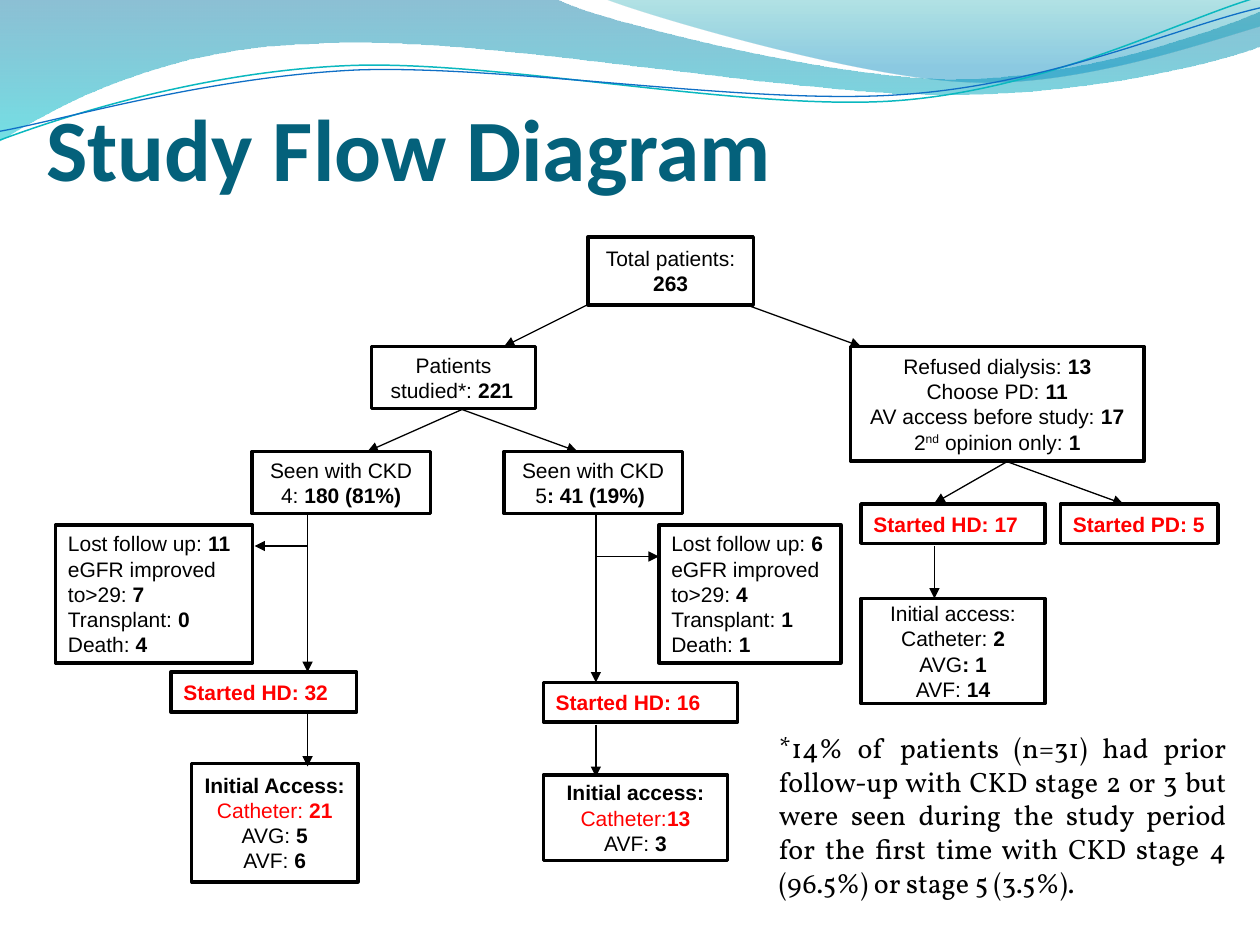
"""Build the study flow diagram slide."""
from itertools import groupby
from math import cos, radians, sin

from lxml.etree import SubElement
from pptx import Presentation
from pptx.dml.color import RGBColor
from pptx.enum.shapes import MSO_CONNECTOR, MSO_SHAPE
from pptx.enum.text import MSO_ANCHOR, PP_ALIGN
from pptx.oxml.ns import qn
from pptx.util import Pt

THEME = {
    "title": ("Calibri", 50, "04617B"),
    "box": ("Arial", 12, "000000"),
    "note": ("Vollkorn", 16, "000000"),
    "red": "FF0000", "ink": "000000", "paper": "FFFFFF",
    "border": 2, "arrow": 0.75,
}

TITLE = "|Study Flow Diagram|"
NOTE = ("*14% of patients (n=31) had prior follow-up with CKD stage 2 or 3 but were "
        "seen during the study period for the first time with CKD stage 4 (96.5%) "
        "or stage 5 (3.5%). ")

MARKS = {"|": "bold", "~": "red", "^": "super"}
BOXES = [
    ((336, 135.36, 94.5, 38.88), "center", ["Total patients: |263|"]),
    ((486, 198, 167.76, 65.5), "center", [
        "Refused dialysis: |13|", "Choose PD: |11|",
        "AV access before study: |17|", "2^nd^ opinion only: |1|"]),
    ((212.4, 198, 93.6, 35.4), "center", ["Patients studied*: |221\t|"]),
    ((97.75, 384, 106, 23), "label", ["~|Started HD: 32|~"]),
    ((31.75, 300, 112.5, 78.75), "left", [
        "Lost follow up: |11|", "eGFR improved to>29: |7|",
        "Transplant: |0|", "Death: |4|"]),
    ((310.5, 442.8, 105.25, 49), "center", [
        "|Initial access: |~Catheter:|13|~", "AVF: |3|"]),
    ((109.5, 436.2, 95, 67.7), "center", [
        "|Initial Access: |~Catheter: |21 |~AVG: |5|", "AVF: |6|"]),
    ((144, 258, 102, 35.4), "center", ["Seen with CKD 4: |180 (81%)|"]),
    ((376.5, 300, 104, 78.75), "left", [
        "Lost follow up: |6|", "eGFR improved to>29: |4|",
        "Transplant: |1|", "Death: |1|"]),
    ((310.5, 390, 111, 22.5), "label", ["~|Started HD: 16|~"]),
    ((288, 258, 102, 35.4), "center", ["Seen with CKD 5|: 41 (19%) |"]),
    ((492, 288, 105.25, 22.5), "label", ["~|Started HD: 17|~"]),
    ((492, 342, 105.25, 60), "center", [
        "Initial access: Catheter: |2|", "AVG|: 1|", "AVF: |14|"]),
    ((606, 288, 90, 22.5), "label", ["~|Started PD: 5|~"]),
]

ARROWS = [
    (264, 234, 210, 258), (264, 234, 330, 258),
    (175.75, 294, 175.75, 384), (340.5, 294, 340.5, 390),
    (175.75, 312, 145.5, 312), (340.5, 318, 376.5, 318),
    (175.75, 408, 175.75, 438), (340.5, 414, 340.5, 444),
    (336, 174, 288, 198), (426, 174, 492, 198),
    (576, 263.5, 534, 287.5), (576, 264, 642, 288),
    (534, 312, 534, 342),
]

TILT = 2.7
WAVES = [
    {"start": (0, 0), "stops": [(0, "0074A1", 45), (1, "00C6CF", 55)],
     "segments": [(317, -1), (343, 12, 478, 45, 546, 45), (614, 45, 690, 19, 720, 6.5),
                  (721, 26), (708, 32, 626, 55, 537, 54), (447, 54, 275, 20, 185, 24.5),
                  (93, 26, 33, 60, -1, 81)]},
    {"start": (345, -1), "stops": [(0, "00A1A9", 30), (0.8, "008BBF", 45)],
     "segments": [(367, 8, 491, 45, 554, 47), (616, 50, 692, 23, 720, 15), (720, 0)]},
    {"start": (0, 80), "line": ("0AB8BF", 0.85), "center": (359.3, 41.4),
     "segments": [(35, 67, 114, 41, 199, 37.5), (284, 34, 427, 64, 513, 57.5),
                  (599, 51, 675, 11, 718.5, -1.5)]},
    {"start": (0, 75), "line": ("0F6FC6", 0.75), "center": (359.6, 42.5),
     "segments": [(34, 69, 118, 44, 204, 40), (290, 37, 430, 60.5, 516, 54),
                  (602, 48, 674, 15, 720, 4.5)]},
]


def rgb(code):
    return RGBColor.from_string(code)


def turned(x, y, center):
    if center is None:
        return Pt(x), Pt(y)
    cx, cy = center
    c, n = cos(radians(TILT)), sin(radians(TILT))
    dx, dy = x - cx, y - cy
    return Pt(cx + dx * c - dy * n), Pt(cy + dx * n + dy * c)


def add_curves(sp, segments):
    for node, pts in zip(list(sp.element.iter(qn("a:lnTo"))), segments):
        if len(pts) == 1:
            continue
        node.tag = qn("a:cubicBezTo")
        node.remove(node[0])
        for x, y in pts:
            pt = SubElement(node, qn("a:pt"))
            pt.set("x", str(x - sp.left))
            pt.set("y", str(y - sp.top))


def add_wave(shapes, wave):
    center = wave.get("center")
    segments = [[turned(x, y, center) for x, y in zip(seg[::2], seg[1::2])]
                for seg in wave["segments"]]
    fb = shapes.build_freeform(*turned(*wave["start"], center))
    fb.add_line_segments([pts[-1] for pts in segments], close=center is None)
    sp = fb.convert_to_shape()
    add_curves(sp, segments)
    sp.shadow.inherit = False
    if center:
        color, width = wave["line"]
        sp.rotation = 360 - TILT
        sp.fill.background()
        sp.line.color.rgb = rgb(color)
        sp.line.width = Pt(width)
        return
    sp.line.fill.background()
    sp.fill.gradient()
    sp.fill.gradient_angle = 270
    for stop, (pos, color, _) in zip(sp.fill.gradient_stops, wave["stops"]):
        stop.position = pos
        stop.color.rgb = rgb(color)
    for clr, (_, _, alpha) in zip(sp.element.spPr.iter(qn("a:srgbClr")), wave["stops"]):
        SubElement(clr, qn("a:alpha")).set("val", str(alpha * 1000))


def styled(text):
    state = set()
    for ch in text:
        if ch in MARKS:
            state ^= {MARKS[ch]}
        else:
            yield ch, tuple(sorted(state))


def write(tf, paras, style, align):
    font, size, color = THEME[style]
    tf.word_wrap = True
    for i, text in enumerate(paras):
        p = tf.add_paragraph() if i else tf.paragraphs[0]
        p.alignment = align
        for state, chars in groupby(styled(text), key=lambda pair: pair[1]):
            r = p.add_run()
            r.text = "".join(ch for ch, _ in chars)
            r.font.name, r.font.size = font, Pt(size)
            r.font.bold = "bold" in state
            r.font.color.rgb = rgb(THEME["red"] if "red" in state else color)
            if "super" in state:
                r.font._element.set("baseline", "30000")


def add_box(shapes, rect, kind, paras):
    sp = shapes.add_shape(MSO_SHAPE.FLOWCHART_PROCESS, *map(Pt, rect))
    sp.shadow.inherit = False
    if kind == "label":
        sp.fill.background()
    else:
        sp.fill.solid()
        sp.fill.fore_color.rgb = rgb(THEME["paper"])
    sp.line.color.rgb = rgb(THEME["ink"])
    sp.line.width = Pt(THEME["border"])
    sp.text_frame.vertical_anchor = MSO_ANCHOR.MIDDLE
    write(sp.text_frame, paras, "box",
          PP_ALIGN.CENTER if kind == "center" else PP_ALIGN.LEFT)


def add_arrow(shapes, ends):
    cn = shapes.add_connector(MSO_CONNECTOR.STRAIGHT, *map(Pt, ends))
    cn.line.color.rgb = rgb(THEME["ink"])
    cn.line.width = Pt(THEME["arrow"])
    SubElement(cn.line._get_or_add_ln(), qn("a:tailEnd")).set("type", "triangle")
    SubElement(cn._element.spPr, qn("a:effectLst"))


def main():
    prs = Presentation()
    prs.slide_width, prs.slide_height = Pt(720), Pt(540)
    s = prs.slides.add_slide(prs.slide_layouts[6])
    for wave in WAVES:
        add_wave(s.shapes, wave)
    tf = s.shapes.add_textbox(Pt(26.5), Pt(23.75), Pt(648), Pt(90)).text_frame
    tf.margin_left = tf.margin_right = tf.margin_bottom = 0
    tf.vertical_anchor = MSO_ANCHOR.BOTTOM
    write(tf, [TITLE], "title", PP_ALIGN.LEFT)
    for box in BOXES:
        add_box(s.shapes, *box)
    for ends in ARROWS:
        add_arrow(s.shapes, ends)
    tf = s.shapes.add_textbox(Pt(438), Pt(414), Pt(270), Pt(104.5)).text_frame
    write(tf, [NOTE], "note", PP_ALIGN.JUSTIFY)
    prs.save("out.pptx")


if __name__ == "__main__":
    main()
